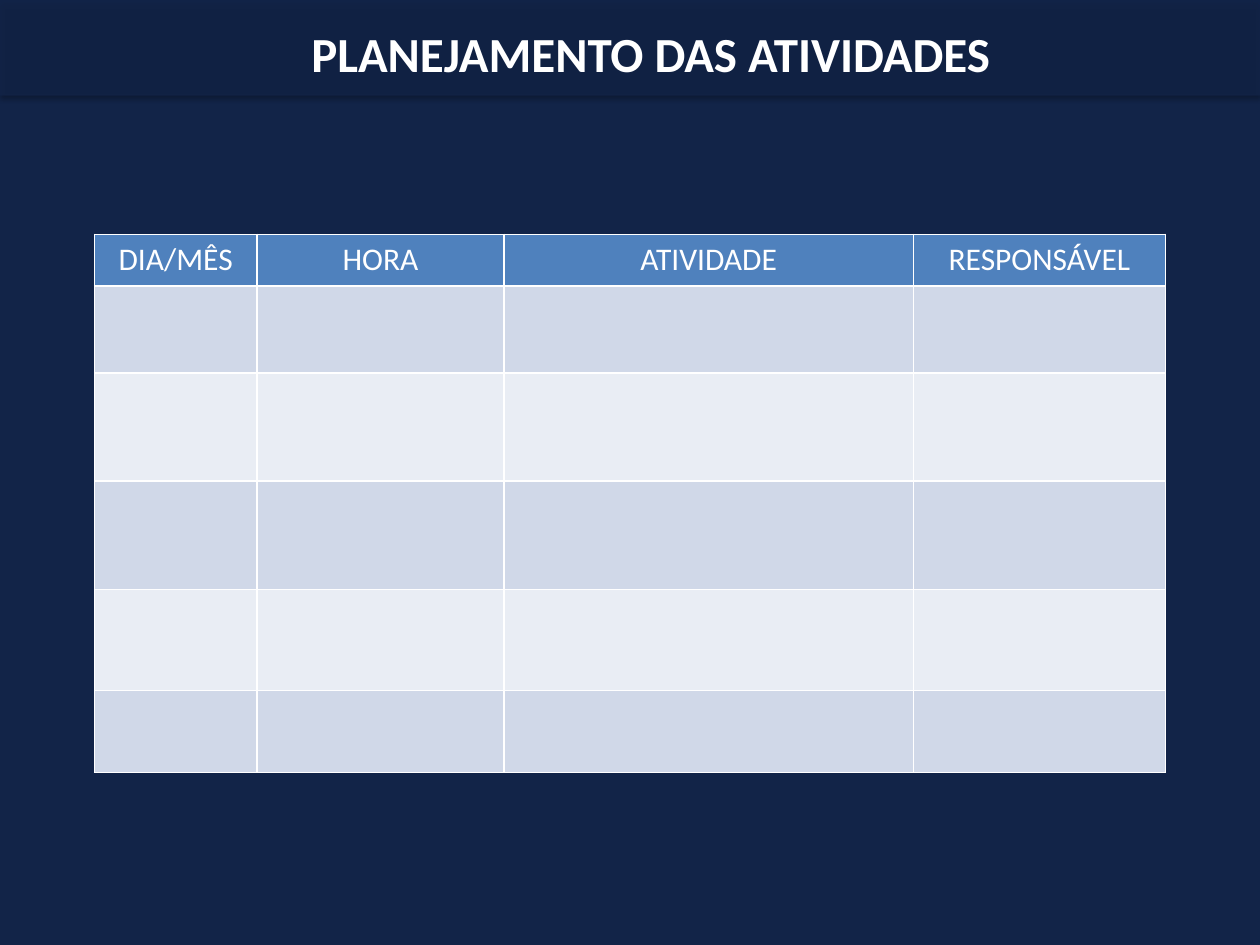
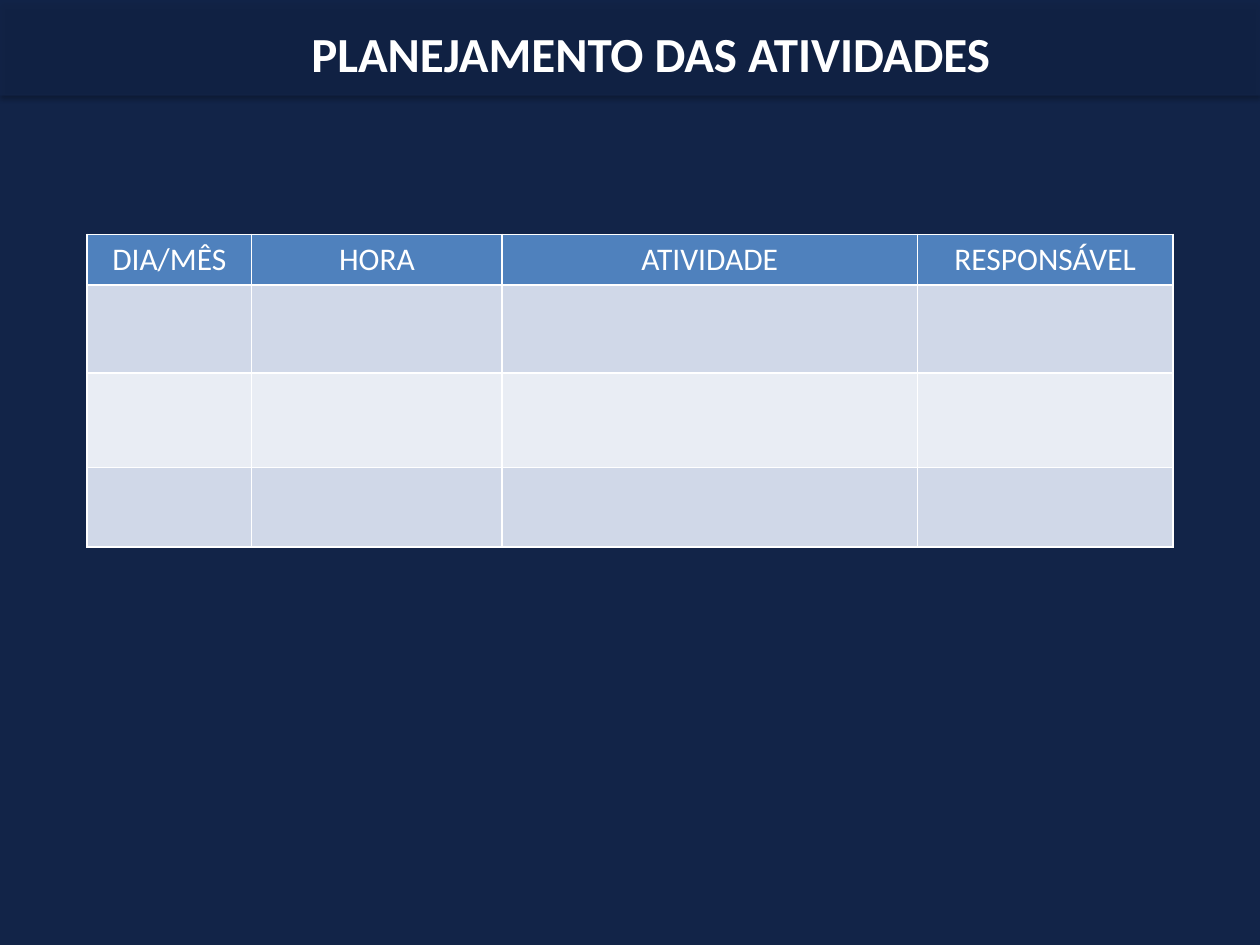
from lxml.etree import SubElement
from pptx import Presentation
from pptx.dml.color import RGBColor
from pptx.enum.shapes import MSO_SHAPE as Shape
from pptx.enum.text import MSO_AUTO_SIZE as AutoSize, PP_ALIGN as Align
from pptx.oxml.ns import qn
from pptx.util import Inches, Pt

TITLE = "PLANEJAMENTO DAS ATIVIDADES"
# Heading and relative width of each column
COLUMNS = [("DIA/MÊS", 1.29), ("HORA", 1.96), ("ATIVIDADE", 3.25), ("RESPONSÁVEL", 2)]
# One schedule per slide; the first row holds the headings
SCHEDULES = [
    {"width": 8.5, "rows": [0.41, 0.69, 0.86, 0.86, 0.8, 0.65]},
    {"width": 8.62, "rows": [0.39, 0.7, 0.75, 0.63]},
]

SLIDE_WIDTH, SLIDE_HEIGHT = 10, 7.5
BAND_HEIGHT = 0.76
TITLE_LEFT, TITLE_TOP, TITLE_HEIGHT = 0.33, 0.14, 0.57
TABLE_TOP = 1.86

FONT = "Calibri"
NAVY = RGBColor(0x12, 0x24, 0x48)
WHITE = RGBColor(0xFF, 0xFF, 0xFF)
BLACK = RGBColor(0, 0, 0)
HEADER_BLUE = RGBColor(0x4F, 0x81, 0xBD)
STRIPES = [RGBColor(0xD0, 0xD8, 0xE8), RGBColor(0xE9, 0xED, 0xF4)]


def set_alpha(color_element, percent):
    SubElement(color_element, qn("a:alpha"), val=str(percent * 1000))


def add_panel(page, height):
    """Add a navy rectangle across the top of the page."""
    panel = page.shapes.add_shape(
        Shape.RECTANGLE, 0, 0, Inches(SLIDE_WIDTH), Inches(height))
    panel.fill.solid()
    panel.fill.fore_color.rgb = NAVY
    panel.line.fill.background()
    panel.shadow.inherit = False
    return panel


def add_band(page):
    """Add the translucent title band with its soft shadow below."""
    properties = add_panel(page, BAND_HEIGHT)._element.spPr
    set_alpha(properties.find(f"{qn('a:solidFill')}/{qn('a:srgbClr')}"), 80)
    shadow = SubElement(
        properties.find(qn("a:effectLst")), qn("a:outerShdw"),
        blurRad=str(Pt(3.1)), dist=str(Pt(1.5)), dir=str(90 * 60000), rotWithShape="0")
    set_alpha(SubElement(shadow, qn("a:srgbClr"), val=str(BLACK)), 35)


def write(frame, text, size, bold=False):
    frame.text = text
    para = frame.paragraphs[0]
    para.alignment = Align.CENTER
    font = para.font if not text else para.runs[0].font
    font.name, font.size, font.bold = FONT, Pt(size), bold
    font.color.rgb = WHITE


def add_title(page):
    box = page.shapes.add_textbox(
        Inches(TITLE_LEFT), Inches(TITLE_TOP),
        Inches(SLIDE_WIDTH - TITLE_LEFT), Inches(TITLE_HEIGHT))
    box.text_frame.word_wrap = True
    box.text_frame.auto_size = AutoSize.SHAPE_TO_FIT_TEXT
    write(box.text_frame, TITLE, 28, bold=True)


def style_cell(cell, color):
    """Give a cell thin white borders and a plain fill."""
    properties = cell._tc.get_or_add_tcPr()
    for side in ("lnL", "lnR", "lnT", "lnB"):
        border = SubElement(properties, qn(f"a:{side}"), w=str(Pt(1)))
        SubElement(SubElement(border, qn("a:solidFill")), qn("a:srgbClr"), val=str(WHITE))
    cell.fill.solid()
    cell.fill.fore_color.rgb = color


def add_schedule(page, width, rows):
    """Add the activity table, centred across the page."""
    table = page.shapes.add_table(
        len(rows), len(COLUMNS), Inches((SLIDE_WIDTH - width) / 2), Inches(TABLE_TOP),
        Inches(width), Inches(sum(rows))).table
    total = sum(weight for _, weight in COLUMNS)
    for column, (heading, weight) in enumerate(COLUMNS):
        table.columns[column].width = Inches(width * weight / total)
        write(table.cell(0, column).text_frame, heading, 18)
    for index, height in enumerate(rows):
        table.rows[index].height = Inches(height)
        color = STRIPES[(index - 1) % 2] if index else HEADER_BLUE
        for cell in table.rows[index].cells:
            style_cell(cell, color)


def main():
    deck = Presentation()
    deck.slide_width, deck.slide_height = Inches(SLIDE_WIDTH), Inches(SLIDE_HEIGHT)
    for schedule in SCHEDULES:
        page = deck.slides.add_slide(deck.slide_layouts[6])
        add_panel(page, SLIDE_HEIGHT)
        add_band(page)
        add_title(page)
        add_schedule(page, **schedule)
    deck.save("out.pptx")


if __name__ == "__main__":
    main()
